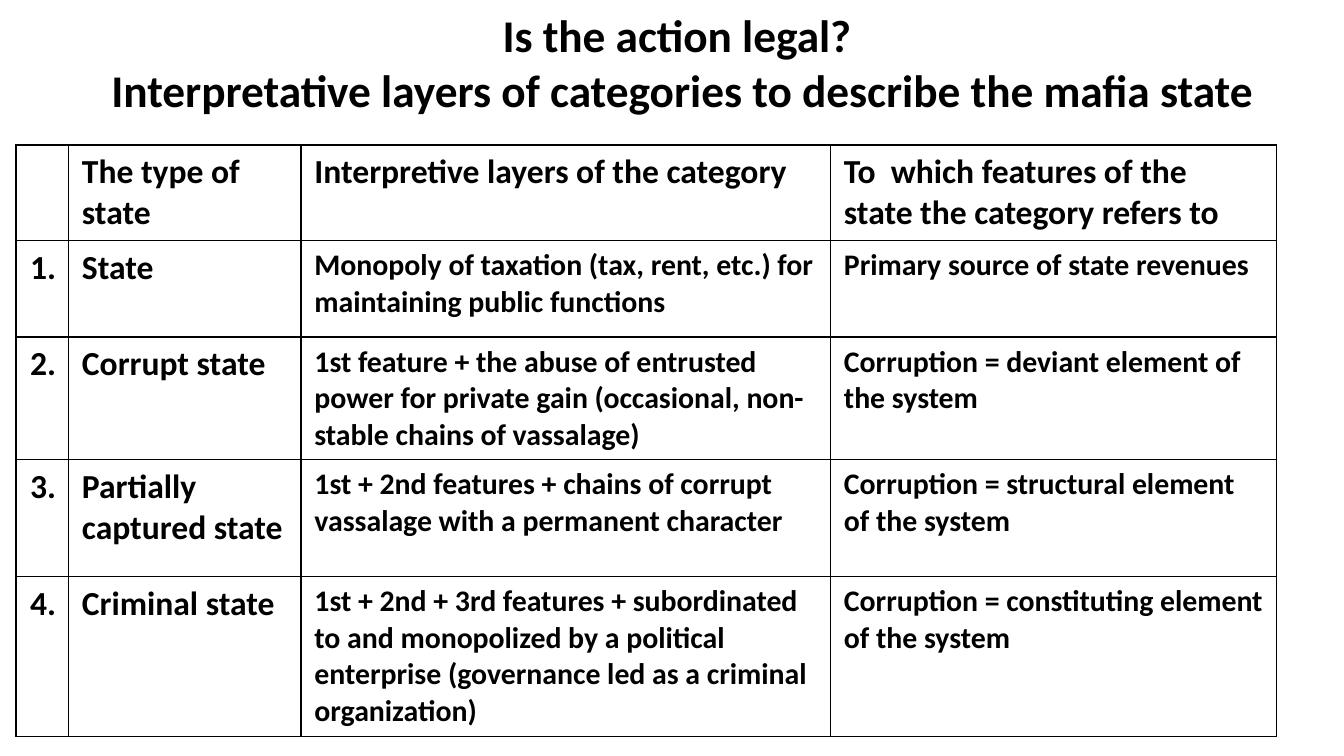
from typing import NamedTuple

from pptx import Presentation
from pptx.dml.color import RGBColor
from pptx.enum.text import MSO_ANCHOR, PP_ALIGN
from pptx.oxml import parse_xml
from pptx.oxml.ns import nsdecls
from pptx.util import Inches, Pt

BLACK = RGBColor(0, 0, 0)
FONT = "Calibri"
TITLE = (
    "Is the action legal? ",
    "Interpretative layers of categories to describe the mafia state",
)
WIDTHS = (0.39, 1.73, 3.94, 3.32)


class Row(NamedTuple):
    height: float
    number: str
    state: str
    layers: str
    feature: str


HEAD = Row(0.71, "", "The type of state", "Interpretive layers of the category",
           "To  which features of the state the category refers to")
STATES = (
    Row(0.72, "1.", "State",
        "Monopoly of taxation (tax, rent, etc.) for maintaining public functions",
        "Primary source of state revenues"),
    Row(0.91, "2.", "Corrupt state",
        "1st feature + the abuse of entrusted power for private gain "
        "(occasional, non-stable chains of vassalage)",
        "Corruption = deviant element of the system"),
    Row(0.87, "3.", "Partially captured state",
        "1st + 2nd features + chains of corrupt vassalage with a permanent character",
        "Corruption = structural element of the system"),
    Row(1.19, "4.", "Criminal state",
        "1st + 2nd + 3rd features + subordinated to and monopolized by a political "
        "enterprise (governance led as a criminal organization)",
        "Corruption = constituting element of the system"),
)


def add_run(para, text: str, size: float) -> None:
    run = para.add_run()
    run.text = text
    run.font.name = FONT
    run.font.size = Pt(size)
    run.font.bold = True
    run.font.color.rgb = BLACK


def add_title(slide) -> None:
    box = slide.shapes.add_textbox(Inches(0.5), Inches(0), Inches(9.15), Inches(0.92))
    frame = box.text_frame
    frame.word_wrap = True
    frame.vertical_anchor = MSO_ANCHOR.MIDDLE
    para = frame.paragraphs[0]
    para.alignment = PP_ALIGN.CENTER
    first, second = TITLE
    add_run(para, first, 24.3)
    para.add_line_break()
    add_run(para, second, 24.3)


def add_border(cell) -> None:
    props = cell._tc.get_or_add_tcPr()
    for place, side in enumerate(("lnL", "lnR", "lnT", "lnB")):
        line = parse_xml(
            f'<a:{side} {nsdecls("a")} w="{Pt(1)}"><a:solidFill>'
            f'<a:srgbClr val="{BLACK}"/></a:solidFill></a:{side}>'
        )
        props.insert(place, line)


def fill_cell(cell, text: str, size: float, align: PP_ALIGN, margin: float) -> None:
    cell.fill.background()
    cell.margin_right = Inches(margin)
    add_border(cell)
    if text:
        para = cell.text_frame.paragraphs[0]
        para.alignment = align
        add_run(para, text, size)


def add_grid(slide) -> None:
    rows = (HEAD, *STATES)
    high = sum(row.height for row in rows)
    frame = slide.shapes.add_table(
        len(rows), len(WIDTHS), Inches(0.12), Inches(1.08),
        Inches(sum(WIDTHS)), Inches(high),
    )
    table = frame.table
    table.first_row = False
    table.horz_banding = False
    for col, width in zip(table.columns, WIDTHS):
        col.width = Inches(width)
    for r, row in enumerate(rows):
        table.rows[r].height = Inches(row.height)
        margin = 0.15 if row is HEAD else 0.09
        for c, text in enumerate(row[1:]):
            size = 16 if r > 0 and c > 1 else 18
            align = PP_ALIGN.CENTER if c == 0 else PP_ALIGN.LEFT
            if (r, c) == (0, 2):
                align = PP_ALIGN.JUSTIFY
            fill_cell(table.cell(r, c), text, size, align, margin)


def main() -> None:
    deck = Presentation()
    deck.slide_width = Inches(10)
    deck.slide_height = Inches(10) * 9 // 16
    slide = deck.slides.add_slide(deck.slide_layouts[6])
    add_title(slide)
    add_grid(slide)
    deck.save("out.pptx")


if __name__ == "__main__":
    main()
